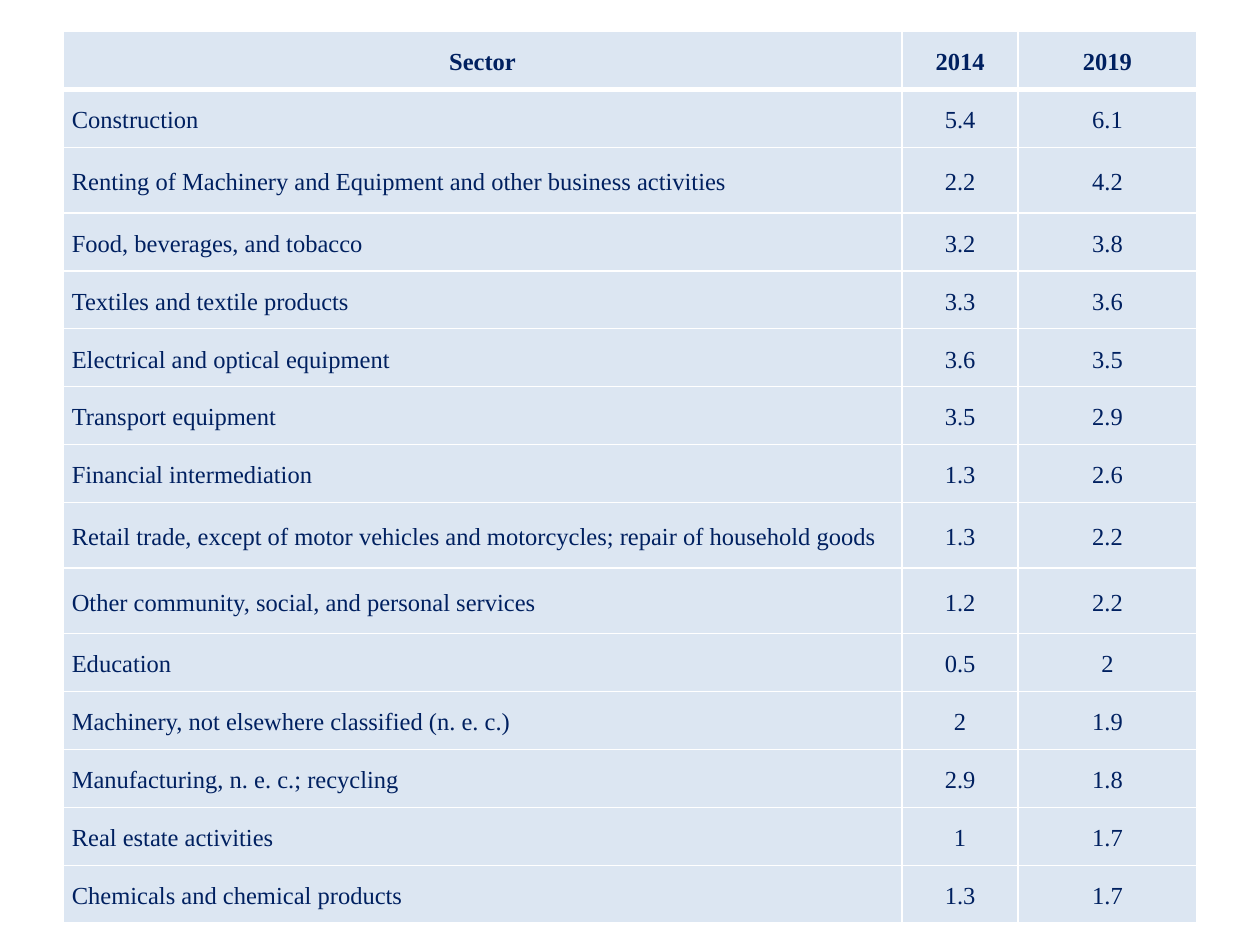
from dataclasses import dataclass

from lxml.etree import SubElement
from pptx import Presentation
from pptx.dml.color import RGBColor
from pptx.enum.text import MSO_ANCHOR, PP_ALIGN
from pptx.oxml.ns import qn
from pptx.util import Inches, Pt


@dataclass(frozen=True)
class Theme:
    """Colours, type and line sizes of the slide."""
    font: str = "Times New Roman"
    size: int = 14
    spacing: float = 1.15
    ink: str = "002060"
    cell: str = "DCE6F2"
    rule: str = "FFFFFF"
    thin: int = 1
    thick: int = 3


THEME = Theme()
SLIDE_WIDTH, SLIDE_HEIGHT = Inches(10), Inches(7.5)
LEFT, TOP = SLIDE_WIDTH / 20, SLIDE_HEIGHT / 30
COLUMN_SHARES = (0.666, 0.092, 0.142)
ROW_HEIGHT, TALL_ROW_HEIGHT = Inches(0.46), Inches(0.52)
TALL_ROWS = {2, 8, 9}
HEADINGS = ("Sector", "2014", "2019")
SECTORS = (
    ("Construction", 5.4, 6.1),
    ("Renting of Machinery and Equipment and other business activities", 2.2, 4.2),
    ("Food, beverages, and tobacco", 3.2, 3.8),
    ("Textiles and textile products", 3.3, 3.6),
    ("Electrical and optical equipment", 3.6, 3.5),
    ("Transport equipment", 3.5, 2.9),
    ("Financial intermediation", 1.3, 2.6),
    ("Retail trade, except of motor vehicles and motorcycles; repair of household goods", 1.3, 2.2),
    ("Other community, social, and personal services", 1.2, 2.2),
    ("Education", 0.5, 2),
    ("Machinery, not elsewhere classified (n. e. c.)", 2, 1.9),
    ("Manufacturing, n. e. c.; recycling", 2.9, 1.8),
    ("Real estate activities", 1, 1.7),
    ("Chemicals and chemical products", 1.3, 1.7),
)


def write_text(text_frame, text, *, align=PP_ALIGN.CENTER, bold=False):
    """Write one paragraph in the theme's type."""
    paragraph = text_frame.paragraphs[0]
    paragraph.alignment = align
    paragraph.line_spacing = THEME.spacing
    run = paragraph.add_run()
    run.text = text
    run.font.name = THEME.font
    run.font.size = Pt(THEME.size)
    run.font.bold = bold
    run.font.color.rgb = RGBColor.from_string(THEME.ink)


def draw_borders(cell, top, bottom):
    """Draw the four cell borders, with top and bottom widths in points."""
    properties = cell._tc.get_or_add_tcPr()
    widths = {"a:lnL": THEME.thin, "a:lnR": THEME.thin, "a:lnT": top, "a:lnB": bottom}
    for tag, width in widths.items():
        line = SubElement(properties, qn(tag), w=str(Pt(width)))
        fill = SubElement(line, qn("a:solidFill"))
        SubElement(fill, qn("a:srgbClr"), val=THEME.rule)


def format_cell(cell, row):
    """Set the borders, fill, margins and anchor of a cell."""
    draw_borders(cell,
                 top=THEME.thick if row == 1 else THEME.thin,
                 bottom=THEME.thick if row == 0 else THEME.thin)
    cell.fill.solid()
    cell.fill.fore_color.rgb = RGBColor.from_string(THEME.cell)
    cell.margin_left = cell.margin_right = Inches(0.07)
    cell.margin_top = cell.margin_bottom = 0
    cell.vertical_anchor = MSO_ANCHOR.MIDDLE


def add_sector_table(slide):
    """Add the table of sector shares with its heading row."""
    records = (HEADINGS, *SECTORS)
    widths = [int(SLIDE_WIDTH * share) for share in COLUMN_SHARES]
    heights = [TALL_ROW_HEIGHT if row in TALL_ROWS else ROW_HEIGHT
               for row in range(len(records))]
    table = slide.shapes.add_table(len(records), len(widths), int(LEFT), int(TOP),
                                   sum(widths), sum(heights)).table
    for column, width in zip(table.columns, widths):
        column.width = width
    for row, (record, height) in enumerate(zip(records, heights)):
        table.rows[row].height = height
        for column, value in enumerate(record):
            cell = table.cell(row, column)
            format_cell(cell, row)
            is_name = row > 0 and column == 0
            write_text(cell.text_frame, str(value), bold=row == 0,
                       align=PP_ALIGN.JUSTIFY if is_name else PP_ALIGN.CENTER)


def main():
    """Build and save the presentation."""
    presentation = Presentation()
    presentation.slide_width, presentation.slide_height = SLIDE_WIDTH, SLIDE_HEIGHT
    slide = presentation.slides.add_slide(presentation.slide_layouts[6])
    add_sector_table(slide)
    presentation.save("out.pptx")


if __name__ == "__main__":
    main()
